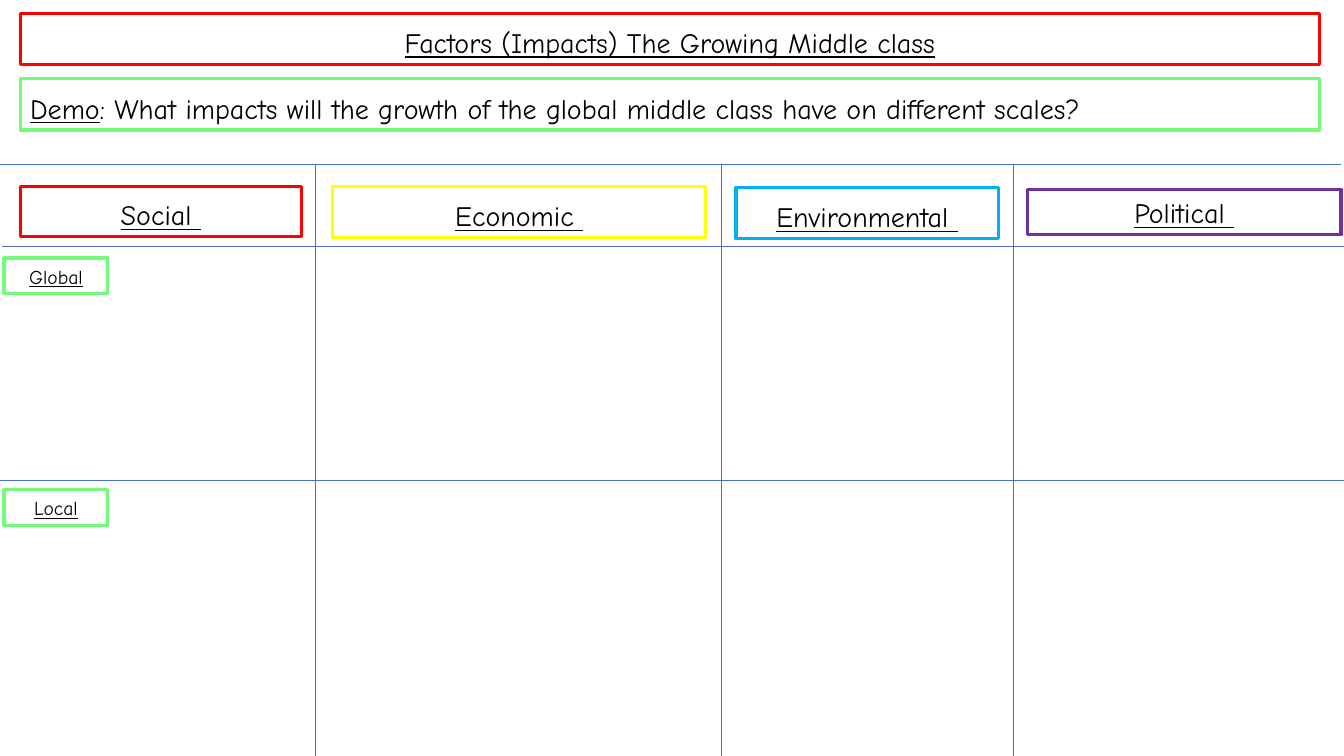
"""Builds a grid slide on the impacts of the growing middle class."""
from lxml import etree
from pptx import Presentation
from pptx.dml.color import RGBColor
from pptx.enum.shapes import MSO_CONNECTOR, MSO_SHAPE
from pptx.enum.text import MSO_ANCHOR, PP_ALIGN
from pptx.oxml.ns import qn
from pptx.util import Inches, Pt

RECTANGLE = MSO_SHAPE.RECTANGLE
STRAIGHT = MSO_CONNECTOR.STRAIGHT
BOTTOM = MSO_ANCHOR.BOTTOM
LEFT = PP_ALIGN.LEFT
CENTER = PP_ALIGN.CENTER

WIDTH, HEIGHT = 13.33, 7.5
RED, GREEN, YELLOW = "FF0000", "73FB79", "FFFF00"
BLUE, PURPLE, GRID_BLUE = "00B0F0", "7030A0", "4472C4"


def color(code):
    return RGBColor.from_string(code)


class ImpactSlide:
    def __init__(self, slide):
        self.shapes = slide.shapes
        self.text_format = {"name": "Comic Neue"}

    def box(self, place, border, runs, size=20, align=CENTER):
        frame = self.shapes.add_shape(RECTANGLE, *map(Inches, place))
        frame.shadow.inherit = False
        frame.fill.solid()
        frame.fill.fore_color.rgb = color("FFFFFF")
        frame.line.color.rgb = color(border)
        frame.line.width = Pt(2.25)
        frame.text_frame.word_wrap = True
        frame.text_frame.vertical_anchor = BOTTOM
        paragraph = frame.text_frame.paragraphs[0]
        paragraph.alignment = align
        paragraph.line_spacing = 0.9
        for words, underline in runs:
            run = paragraph.add_run()
            run.text = words
            run.font.color.rgb = color("000000")
            run_format = self.text_format | {"size": Pt(size), "underline": underline}
            for attribute, value in run_format.items():
                setattr(run.font, attribute, value)

    def rule(self, *ends):
        rule = self.shapes.add_connector(STRAIGHT, *map(Inches, ends))
        rule.line.color.rgb = color(GRID_BLUE)
        rule.line.width = Pt(0.5)
        etree.SubElement(rule._element.spPr, qn("a:effectLst"))


def main():
    deck = Presentation()
    deck.slide_width, deck.slide_height = Inches(WIDTH), Inches(HEIGHT)
    page = ImpactSlide(deck.slides.add_slide(deck.slide_layouts[6]))

    page.box((0.2, 0.13, 12.89, 0.51), RED,
             [("Factors (Impacts) The Growing Middle class", True)])
    question = ": What impacts will the growth of the global middle class have on different scales?"
    page.box((0.2, 0.78, 12.89, 0.51), GREEN,
             [("Demo", True), (question, False)], align=LEFT)

    factors = [
        ("Social ", RED, (0.2, 1.85, 2.79, 0.5)),
        ("Economic ", YELLOW, (3.3, 1.85, 3.7, 0.51)),
        ("Environmental ", BLUE, (7.3, 1.86, 2.6, 0.51)),
        ("Political ", PURPLE, (10.19, 1.88, 3.11, 0.45)),
    ]
    for factor, border, place in factors:
        page.box(place, border, [(factor, True)])

    grid_top = 1.63
    for left, right, y in [(-0.01, 13.3, grid_top), (0.02, WIDTH, 2.44), (0, WIDTH, 4.77)]:
        page.rule(left, y, right, y)
    for x in (3.13, 7.15, 10.05):
        page.rule(x, grid_top, x, HEIGHT)

    for scale, top in [("Global", 2.56), ("Local", 4.86)]:
        page.box((0.04, top, 1.03, 0.35), GREEN, [(scale, True)], size=14)

    deck.save("out.pptx")


if __name__ == "__main__":
    main()
